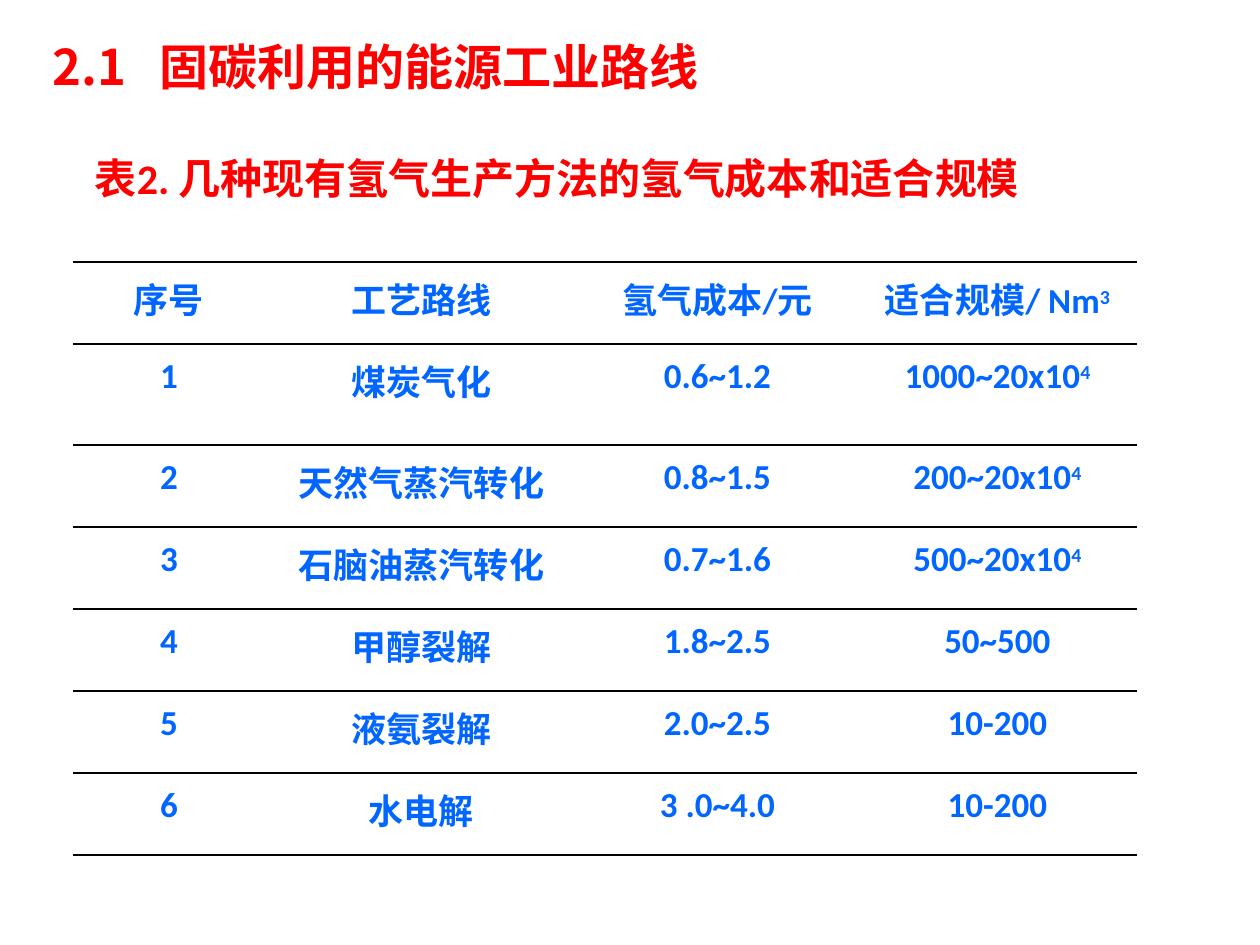
from lxml import etree
from pptx import Presentation
from pptx.dml.color import RGBColor
from pptx.enum.text import MSO_AUTO_SIZE, PP_ALIGN
from pptx.oxml.ns import qn
from pptx.util import Inches, Pt

PX = 914400 / 126
RED = RGBColor(0xFF, 0x00, 0x00)
BLUE = RGBColor(0x00, 0x66, 0xFF)
BLACK = RGBColor(0x00, 0x00, 0x00)
LATIN, CJK = "Calibri", "Noto Sans CJK SC"
CENTER = PP_ALIGN.CENTER
GROW = MSO_AUTO_SIZE.SHAPE_TO_FIT_TEXT

TITLE = {"size": Pt(28), "bold": True}
CAPTION = {"size": Pt(24), "bold": True}
BODY = {"size": Pt(20), "bold": True}
SUPER = {"size": Pt(19.5), "bold": True}

COLS = [178, 333, 265, 288]
INDENTS = [14, 8, 2, 9]
ROWS = [82, 101] + [82] * 5

# Each cell is a list of (text, font) runs; "^" marks a superscript run
HEADER = [
    [("序号", CJK)],
    [("工艺路线", CJK)],
    [("氢气成本", CJK), ("/", LATIN), ("元", CJK)],
    [("适合规模", CJK), ("/ Nm", LATIN), ("3", "^")],
]
POWER = [("4", "^")]
METHODS = [
    ("煤炭气化", "0.6~1.2", "1000~20x10", POWER),
    ("天然气蒸汽转化", "0.8~1.5", "200~20x10", POWER),
    ("石脑油蒸汽转化", "0.7~1.6", "500~20x10", POWER),
    ("甲醇裂解", "1.8~2.5", "50~500", []),
    ("液氨裂解", "2.0~2.5", "10-200", []),
    ("水电解", "3 .0~4.0", "10-200", []),
]


def px(n):
    return round(n * PX)


def add_run(p, text, font, color, fmt):
    r = p.add_run()
    r.text = text
    for key, value in fmt.items():
        setattr(r.font, key, value)
    r.font.color.rgb = color
    r.font.name = font
    rPr = r._r.get_or_add_rPr()
    etree.SubElement(rPr, qn("a:ea"), typeface=font)
    return rPr


def add_heading(slide, box, runs, fmt, spacing, top_inset=0, tab=None):
    sp = slide.shapes.add_textbox(*map(px, box))
    tf = sp.text_frame
    settings = {"word_wrap": True, "auto_size": GROW, "margin_left": 0,
                "margin_top": px(top_inset), "margin_right": 0, "margin_bottom": 0}
    for key, value in settings.items():
        setattr(tf, key, value)
    p = tf.paragraphs[0]
    p.line_spacing = spacing
    if tab:
        tabs = etree.SubElement(p._p.get_or_add_pPr(), qn("a:tabLst"))
        etree.SubElement(tabs, qn("a:tab"), pos=str(px(tab)), algn="l")
    for text, font in runs:
        add_run(p, text, font, RED, fmt)


def set_borders(cell):
    """Black rules above and below, none at the sides."""
    tcPr = cell._tc.get_or_add_tcPr()
    for side in ("L", "R"):
        ln = etree.SubElement(tcPr, qn(f"a:ln{side}"), w="0")
        etree.SubElement(ln, qn("a:noFill"))
    for side in ("T", "B"):
        ln = etree.SubElement(tcPr, qn(f"a:ln{side}"), w=str(Pt(1)))
        fill = etree.SubElement(ln, qn("a:solidFill"))
        etree.SubElement(fill, qn("a:srgbClr"), val=str(BLACK))


def fill_cell(cell, runs, indent):
    set_borders(cell)
    cell.fill.background()
    margins = {"margin_left": 0, "margin_top": px(11),
               "margin_right": 0, "margin_bottom": 0}
    for key, value in margins.items():
        setattr(cell, key, value)
    p = cell.text_frame.paragraphs[0]
    p.alignment = CENTER
    pPr = p._p.get_or_add_pPr()
    pPr.set("marL", str(px(indent)))
    pPr.set("indent", "0")
    for text, font in runs:
        if font == "^":
            add_run(p, text, LATIN, BLUE, SUPER).set("baseline", "26000")
        else:
            add_run(p, text, font, BLUE, BODY)


def add_cost_table(slide, left, top):
    rows = [HEADER]
    for number, (method, cost, scale, power) in enumerate(METHODS, 1):
        rows.append([[(str(number), LATIN)], [(method, CJK)],
                     [(cost, LATIN)], [(scale, LATIN)] + power])
    frame = slide.shapes.add_table(len(ROWS), len(COLS), px(left), px(top),
                                   px(sum(COLS)), px(sum(ROWS)))
    table = frame.table
    table.first_row = table.horz_banding = False
    for column, width in zip(table.columns, COLS):
        column.width = px(width)
    for i, (height, row) in enumerate(zip(ROWS, rows)):
        table.rows[i].height = px(height)
        for j, runs in enumerate(row):
            fill_cell(table.cell(i, j), runs, INDENTS[j])


def main():
    prs = Presentation()
    prs.slide_width, prs.slide_height = Inches(10), Inches(7.5)
    slide = prs.slides.add_slide(prs.slide_layouts[6])

    # Cost table
    add_cost_table(slide, 73, 262)

    # Table caption
    add_heading(slide, (95, 157, 932, 54),
                [("表", CJK), ("2. ", LATIN),
                 ("几种现有氢气生产方法的氢气成本和适合规模", CJK)],
                CAPTION, 0.83, top_inset=4)

    # Section title
    add_heading(slide, (53, 43, 714, 59),
                [("2.1\t固碳利用的能源工业路线", CJK)], TITLE, 0.9, tab=107)

    prs.save("out.pptx")


if __name__ == "__main__":
    main()
